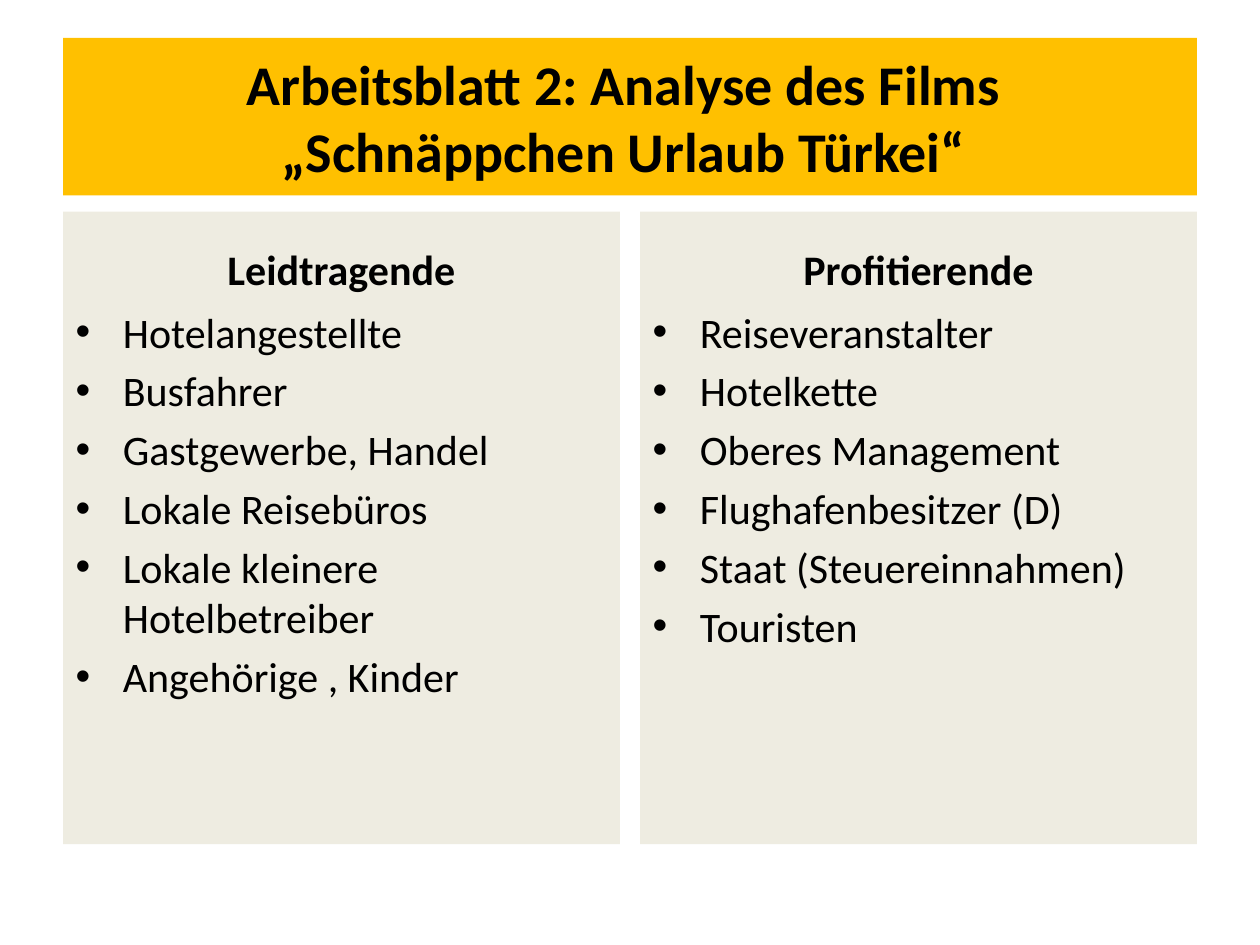
from copy import deepcopy

from pptx import Presentation
from pptx.dml.color import RGBColor
from pptx.enum.text import MSO_ANCHOR, MSO_AUTO_SIZE, PP_ALIGN
from pptx.oxml.ns import qn
from pptx.util import Inches, Pt

AMBER = RGBColor(0xFF, 0xC0, 0x00)
SAND = RGBColor(0xEE, 0xEC, 0xE1)
BLACK = RGBColor(0x00, 0x00, 0x00)
CENTER = PP_ALIGN.CENTER
TOP, MIDDLE, BOTTOM = MSO_ANCHOR.TOP, MSO_ANCHOR.MIDDLE, MSO_ANCHOR.BOTTOM
NO_AUTOFIT = MSO_AUTO_SIZE.NONE

FONT = "Calibri"
COMPARISON_LAYOUT = 4
MARGIN = 0.5
COLUMN_WIDTH = 4.42
COLUMN_STEP = 4.58

TITLE_LINES = ["Arbeitsblatt 2: Analyse des Films ", "„Schnäppchen Urlaub Türkei“ "]
COLUMNS = [
    ("Leidtragende", [
        "Hotelangestellte", "Busfahrer", "Gastgewerbe, Handel", "Lokale Reisebüros",
        "Lokale kleinere Hotelbetreiber", "Angehörige , Kinder"]),
    ("Profitierende", [
        "Reiseveranstalter", "Hotelkette", "Oberes Management", "Flughafenbesitzer (D)",
        "Staat (Steuereinnahmen)", "Touristen"]),
]


def place(shape, left, top, width, height, fill, anchor):
    """Position and fill a placeholder, and return its text frame."""
    shape.left, shape.top = Inches(left), Inches(top)
    shape.width, shape.height = Inches(width), Inches(height)
    shape.fill.solid()
    shape.fill.fore_color.rgb = fill
    frame = shape.text_frame
    frame.auto_size = NO_AUTOFIT
    frame.word_wrap = True
    frame.vertical_anchor = anchor
    return frame


def add_run(paragraph, text, size, bold=False):
    run = paragraph.add_run()
    run.text = text
    run.font.name = FONT
    run.font.size = Pt(size)
    run.font.bold = bold
    run.font.color.rgb = BLACK
    return run


def fill_title(shape):
    frame = place(shape, MARGIN, 0.3, 9, 1.25, AMBER, MIDDLE)
    paragraph = frame.paragraphs[0]
    paragraph.alignment = CENTER
    first_line, second_line = TITLE_LINES
    run = add_run(paragraph, first_line, 32, bold=True)
    paragraph.add_line_break()
    # The break takes the run's size, so that the line height stays even
    paragraph._p.find(qn("a:br")).append(deepcopy(run._r.rPr))
    add_run(paragraph, second_line, 32, bold=True)


def fill_heading(shape, left, text):
    frame = place(shape, left, 1.68, COLUMN_WIDTH, 0.7, SAND, BOTTOM)
    paragraph = frame.paragraphs[0]
    paragraph.alignment = CENTER
    add_run(paragraph, text, 24, bold=True)


def fill_list(shape, left, items):
    """Write one paragraph per item; bullets come from the layout."""
    frame = place(shape, left, 2.38, COLUMN_WIDTH, 4.32, SAND, TOP)
    for index, item in enumerate(items):
        paragraph = frame.add_paragraph() if index else frame.paragraphs[0]
        add_run(paragraph, item, 24)


def main():
    presentation = Presentation()
    presentation.slide_width = Inches(10)
    presentation.slide_height = Inches(7.5)
    slide = presentation.slides.add_slide(presentation.slide_layouts[COMPARISON_LAYOUT])

    # Title band
    fill_title(slide.shapes.title)

    # Two columns, each with a heading above a bullet list
    bodies = list(slide.placeholders)[1:]
    for index, (heading, items) in enumerate(COLUMNS):
        left = MARGIN + index * COLUMN_STEP
        heading_shape, list_shape = bodies[2 * index:2 * index + 2]
        fill_heading(heading_shape, left, heading)
        fill_list(list_shape, left, items)

    presentation.save("out.pptx")


if __name__ == "__main__":
    main()
